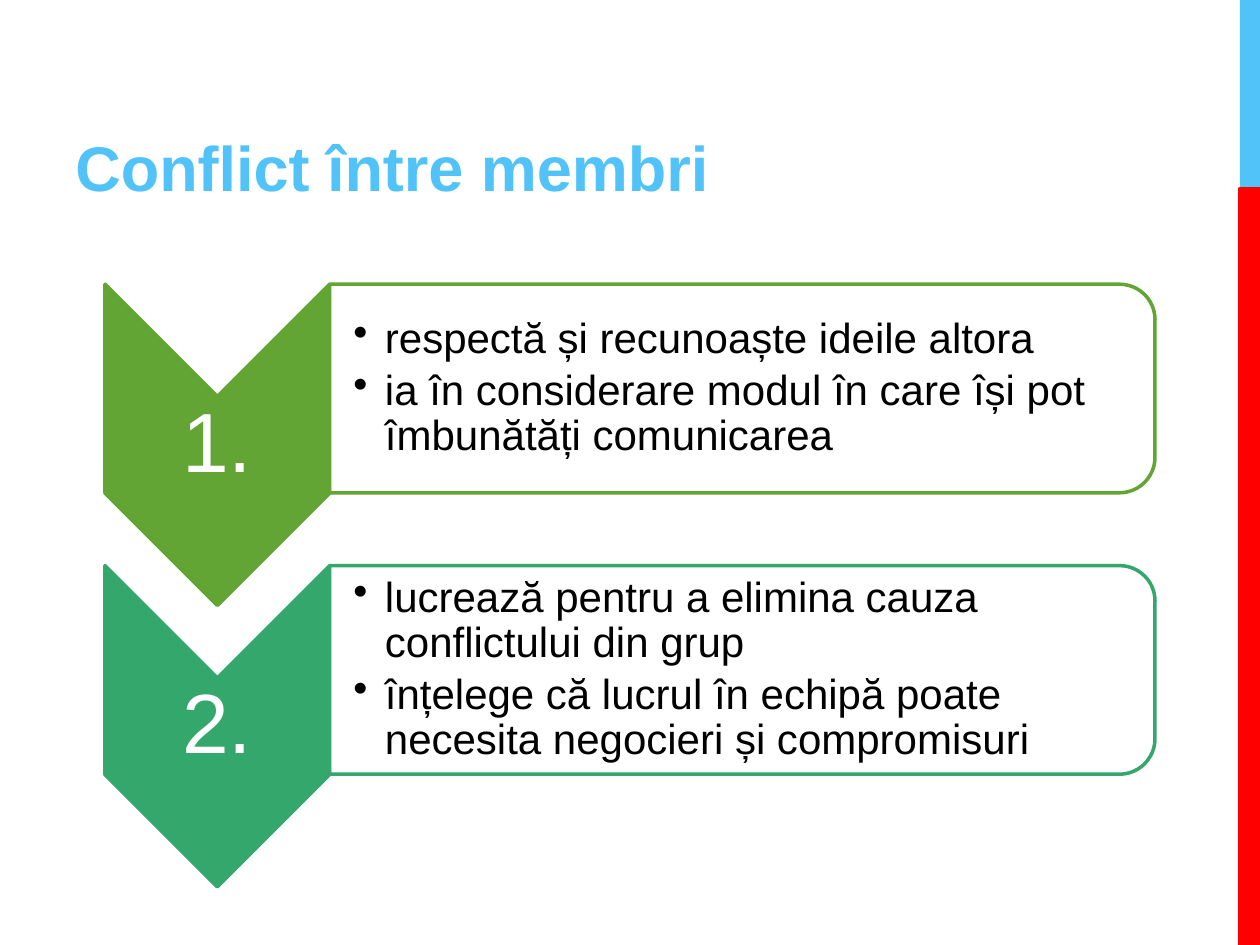
from lxml import etree
from pptx import Presentation
from pptx.dml.color import RGBColor
from pptx.enum import shapes, text
from pptx.oxml import ns
from pptx.util import Pt

SKY = RGBColor(0x51, 0xC3, 0xF9)
RED = RGBColor(0xFF, 0x00, 0x00)
GREEN = RGBColor(0x62, 0xA5, 0x34)
TEAL = RGBColor(0x34, 0xA7, 0x6C)
WHITE = RGBColor(0xFF, 0xFF, 0xFF)
BLACK = RGBColor(0x00, 0x00, 0x00)

STEPS = [
    ("1.", GREEN, ["respectă și recunoaște ideile altora",
                   "ia în considerare modul în care își pot îmbunătăți comunicarea"]),
    ("2.", TEAL, ["lucrează pentru a elimina cauza conflictului din grup",
                  "înțelege că lucrul în echipă poate necesita negocieri și compromisuri"]),
]
STEP_PITCH = 160.8

presentation = Presentation()
presentation.slide_width = Pt(720)
presentation.slide_height = Pt(540)
slide = presentation.slides.add_slide(presentation.slide_layouts[6])


def add_block(kind, box, fill, line=None, line_width=2):
    shape = slide.shapes.add_shape(kind, *[Pt(value) for value in box])
    shape.shadow.inherit = False
    shape.fill.solid()
    shape.fill.fore_color.rgb = fill
    if line is None:
        shape.line.fill.background()
    else:
        shape.line.color.rgb = line
        shape.line.width = Pt(line_width)
    return shape


def add_label(box, lines, size, color, anchor, margins, bold=False, bullet=False):
    frame = slide.shapes.add_textbox(*[Pt(value) for value in box]).text_frame
    frame.word_wrap = True
    frame.vertical_anchor = anchor
    frame.margin_left, frame.margin_top, frame.margin_right, frame.margin_bottom = map(Pt, margins)
    frame.text = "\n".join(lines)
    for index, paragraph in enumerate(frame.paragraphs):
        if bullet:
            properties = paragraph._p.get_or_add_pPr()
            properties.set("marL", str(Pt(18)))
            properties.set("indent", str(Pt(-18)))
            etree.SubElement(properties, ns.qn("a:buChar")).set("char", "•")
            if index:
                paragraph.space_before = Pt(3.6)
        for run in paragraph.runs:
            run.font.name = "Arial"
            run.font.size = Pt(size)
            run.font.bold = bold
            run.font.color.rgb = color
    return frame


add_block(shapes.MSO_SHAPE.RECTANGLE, (708.5, 0, 11.5, 108), SKY)
add_block(shapes.MSO_SHAPE.RECTANGLE, (708.5, 108, 11.5, 432), RED, RED, 2.25)
add_label((36, 12, 505.4, 108), ["Conflict între membri"], 36, SKY,
          text.MSO_ANCHOR.BOTTOM, (7.2, 3.6, 7.2, 3.6), bold=True)

for index, (number, color, points) in enumerate(STEPS):
    offset = index * STEP_PITCH

    chevron = add_block(shapes.MSO_SHAPE.CHEVRON, (32.4, 190 + offset, 183.6, 128.4), color, color)
    chevron.rotation = 90
    number_frame = add_label((60, 226.8 + offset, 128.4, 55), [number], 48, WHITE,
                             text.MSO_ANCHOR.MIDDLE, (2.2, 2.2, 2.2, 2.2))
    number_frame.paragraphs[0].alignment = text.PP_ALIGN.CENTER

    panel = add_block(shapes.MSO_SHAPE.ROUND_2_SAME_RECTANGLE,
                      (364.6, -13.8 + offset, 119.2, 471.6), WHITE, color)
    panel.rotation = 90
    panel.adjustments[0] = 0.17
    fill_color = panel.fill._xPr.find(ns.qn("a:solidFill"))[0]
    etree.SubElement(fill_color, ns.qn("a:alpha")).set("val", "90000")
    points_frame = add_label((188.6, 168.3 + offset, 465.8, 107.4), points, 24, BLACK,
                             text.MSO_ANCHOR.MIDDLE, (13.4, 1.4, 1.4, 1.4), bullet=True)

    for paragraph in number_frame.paragraphs + points_frame.paragraphs:
        paragraph.line_spacing = 0.9

presentation.save("out.pptx")
